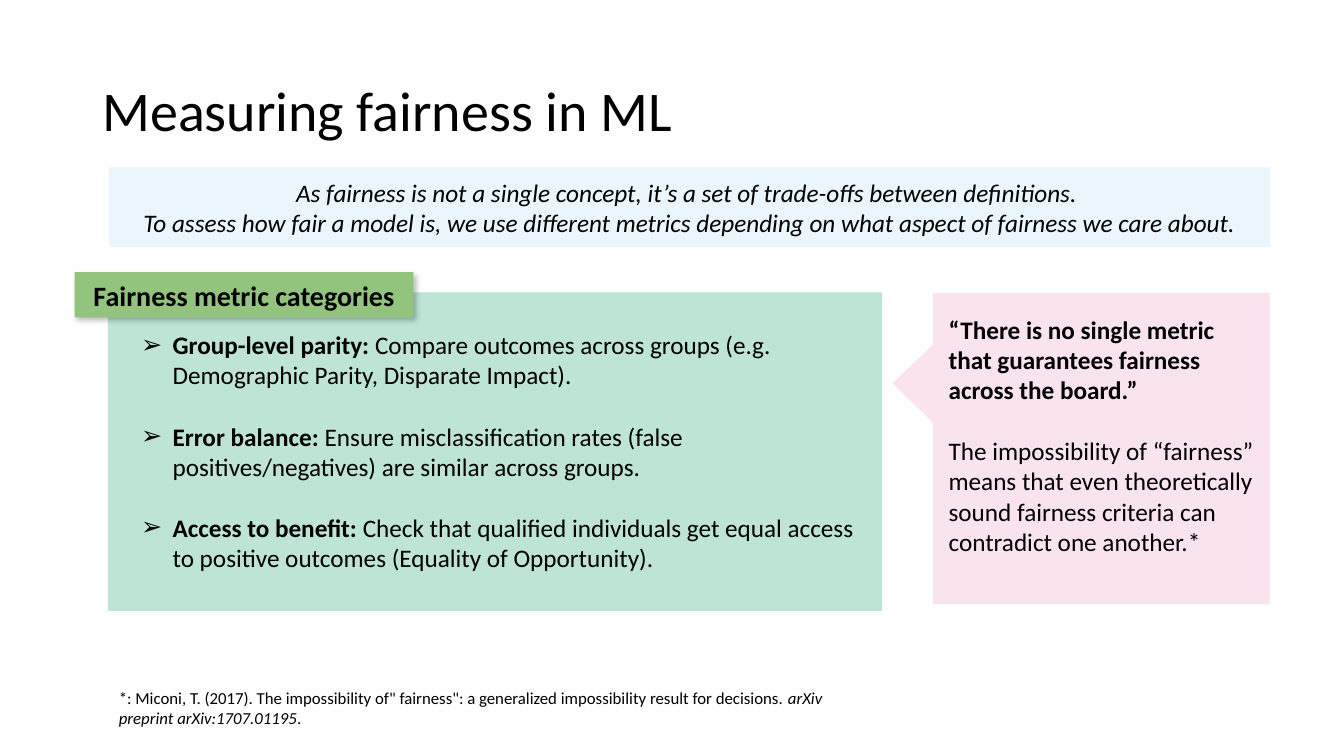
from lxml import etree
from pptx import Presentation
from pptx.dml.color import RGBColor
from pptx.enum import shapes, text
from pptx.oxml import ns
from pptx.util import Pt

FONT = "Calibri"
BODY_SIZE = 18
LINE_GAP = 22
COLORS = {
    "ink": "000000",
    "banner": "EBF5FC",
    "panel": "BEE4D6",
    "tag": "93C47D",
    "callout": "F9E3EF",
}
METRICS = [
    ("Group-level parity:",
     " Compare outcomes across groups (e.g. Demographic Parity, Disparate Impact)."),
    ("Error balance:",
     " Ensure misclassification rates (false positives/negatives) are similar across groups."),
    ("Access to benefit:",
     " Check that qualified individuals get equal access to positive outcomes (Equality of Opportunity)."),
]


def add_block(slide, box, fill, kind=shapes.MSO_SHAPE.RECTANGLE):
    block = slide.shapes.add_shape(kind, *map(Pt, box))
    block.shadow.inherit = False
    block.fill.solid()
    block.fill.fore_color.rgb = RGBColor.from_string(COLORS[fill])
    block.line.fill.background()
    return block


def write(shape, paragraphs, size, align=text.PP_ALIGN.LEFT,
          anchor=text.MSO_ANCHOR.TOP, insets=(7.2, 3.6, 7.2, 3.6), gap=0):
    """Fill a shape with paragraphs, each a list of (wording, style) runs.

    A style holds "b" for bold and "i" for italic; gap separates paragraphs.
    """
    frame = shape.text_frame
    frame.word_wrap = True
    frame.vertical_anchor = anchor
    frame.margin_left, frame.margin_top, frame.margin_right, frame.margin_bottom = map(Pt, insets)
    for index, runs in enumerate(paragraphs):
        paragraph = frame.add_paragraph() if index else frame.paragraphs[0]
        paragraph.alignment = align
        if index and gap:
            paragraph.space_before = Pt(gap)
        for wording, style in runs:
            run = paragraph.add_run()
            run.text = wording
            run.font.name = FONT
            run.font.size = Pt(size)
            run.font.bold = "b" in style
            run.font.italic = "i" in style
            run.font.color.rgb = RGBColor.from_string(COLORS["ink"])
    return frame


def add_text(slide, box, paragraphs, size, **layout):
    return write(slide.shapes.add_textbox(*map(Pt, box)), paragraphs, size, **layout)


def add_bullet(paragraph, indent):
    properties = paragraph._p.get_or_add_pPr()
    properties.set("marL", str(Pt(indent)))
    properties.set("indent", str(-Pt(indent)))
    color = etree.SubElement(properties, ns.qn("a:buClr"))
    etree.SubElement(color, ns.qn("a:srgbClr"), val=COLORS["ink"])
    etree.SubElement(properties, ns.qn("a:buFont"), typeface="Arial")
    etree.SubElement(properties, ns.qn("a:buChar"), char="➢")


def add_soft_shadow(shape):
    effects = shape._element.spPr.find(ns.qn("a:effectLst"))
    shadow = etree.SubElement(effects, ns.qn("a:outerShdw"), blurRad=str(Pt(4)),
                              dist=str(Pt(3)), dir=str(45 * 60000), rotWithShape="0")
    color = etree.SubElement(shadow, ns.qn("a:srgbClr"), val=COLORS["ink"])
    etree.SubElement(color, ns.qn("a:alpha"), val="25000")


def add_title(slide, box):
    frame = add_text(slide, box, [[("Measuring fairness in ML", "")]], 40,
                     anchor=text.MSO_ANCHOR.MIDDLE)
    frame.paragraphs[0].line_spacing = 0.9


def add_banner(slide, box):
    sentences = [
        "As fairness is not a single concept, it’s a set of trade-offs between definitions. ",
        "To assess how fair a model is, we use different metrics depending on "
        "what aspect of fairness we care about.",
    ]
    write(add_block(slide, box, "banner"), [[(sentence, "i")] for sentence in sentences],
          BODY_SIZE, align=text.PP_ALIGN.CENTER, anchor=text.MSO_ANCHOR.MIDDLE)


def add_metric_panel(slide, box):
    """Panel of metric categories with its heading tag over the top left corner."""
    left, top, width, height = box
    add_block(slide, box, "panel")
    metrics = add_text(slide, (left + 12.3, top + 18, width - 12.3, height - 18),
                       [[(name, "b"), (meaning, "")] for name, meaning in METRICS],
                       BODY_SIZE, insets=(11.5, 8.6, 11.5, 8.6), gap=LINE_GAP)
    for paragraph in metrics.paragraphs:
        add_bullet(paragraph, 22.5)

    tag = add_block(slide, (left - 23.7, top - 14.4, 242, 32.4), "tag")
    add_soft_shadow(tag)
    write(tag, [[("Fairness metric categories", "b")]], 20,
          align=text.PP_ALIGN.CENTER, anchor=text.MSO_ANCHOR.MIDDLE)


def add_quote_callout(slide, box):
    callout = add_block(slide, box, "callout", shapes.MSO_SHAPE.RECTANGULAR_CALLOUT)
    callout.adjustments[0] = -0.62
    callout.adjustments[1] = -0.21
    write(callout, [
        [("“There is no single metric that guarantees fairness across the board.”", "b")],
        [("The impossibility of “fairness” means that even theoretically sound "
          "fairness criteria can contradict one another.*", "")],
    ], BODY_SIZE, insets=(11.2, 15, 11.2, 8.6), gap=LINE_GAP)


def add_footnote(slide, box):
    add_text(slide, box, [[
        ("*: Miconi, T. (2017). The impossibility of\" fairness\": "
         "a generalized impossibility result for decisions. ", ""),
        ("arXiv preprint arXiv:1707.01195", "i"),
        (".", ""),
    ]], 12)


def main():
    deck = Presentation()
    deck.slide_width, deck.slide_height = Pt(960), Pt(540)
    slide = deck.slides.add_slide(deck.slide_layouts[6])
    add_title(slide, (66.2, 28.8, 828, 104.4))
    add_banner(slide, (77.8, 119.5, 829.4, 56.9))
    add_metric_panel(slide, (77, 208.8, 553, 227.5))
    add_quote_callout(slide, (666.4, 209.2, 240.5, 222.5))
    add_footnote(slide, (77.8, 487.4, 552.2, 36))
    deck.save("out.pptx")


if __name__ == "__main__":
    main()
